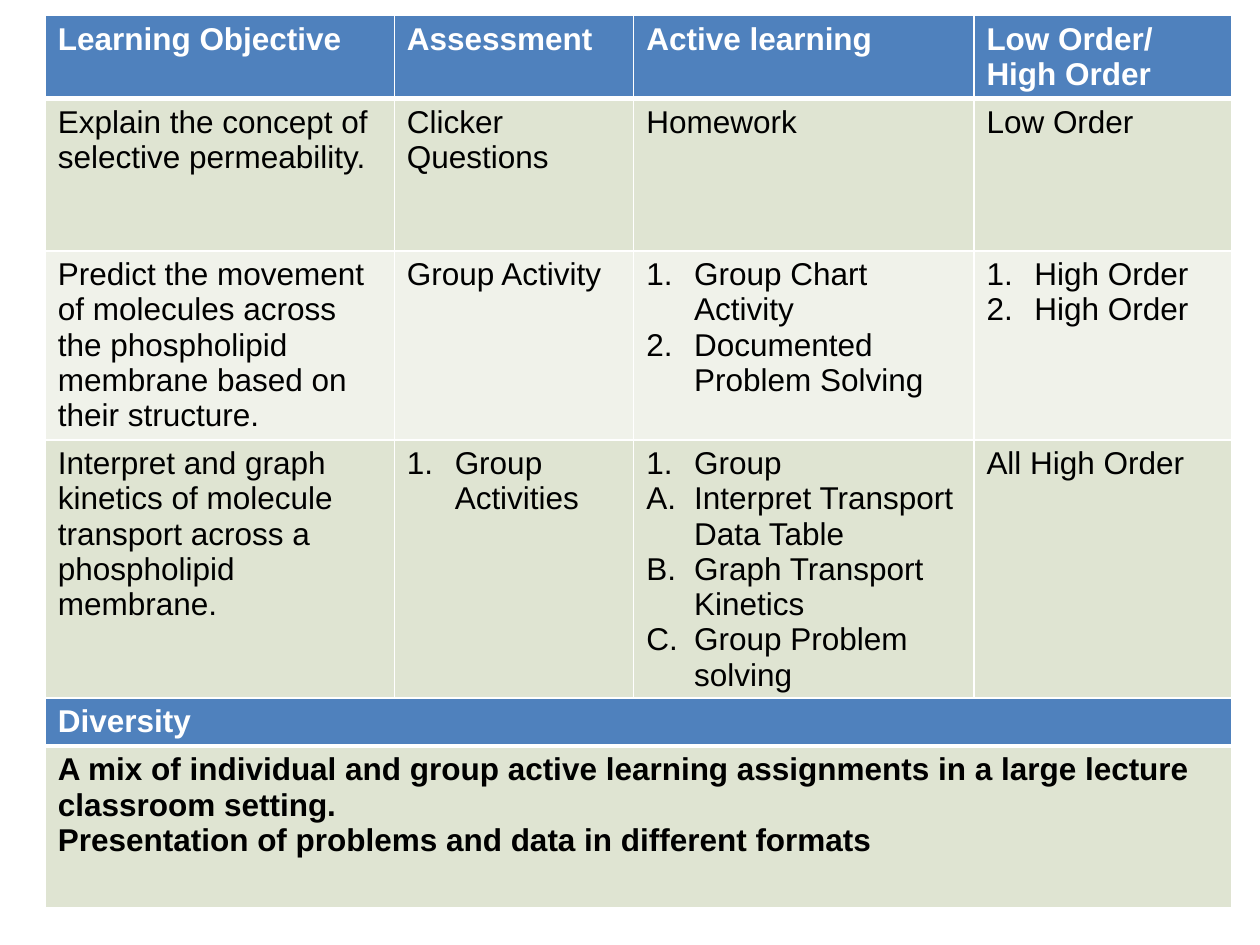
"""Build a slide of learning objectives with a diversity table below."""
from lxml.etree import SubElement
from pptx import Presentation
from pptx.dml.color import RGBColor as Color
from pptx.oxml.ns import qn
from pptx.util import Inches, Pt

BLUE = Color(0x4F, 0x81, 0xBD)
GREEN = Color(0xDF, 0xE4, 0xD2)
PALE = Color(0xF0, 0xF2, 0xEA)
WHITE = Color(0xFF, 0xFF, 0xFF)
BLACK = Color(0x00, 0x00, 0x00)
BANDS = [GREEN, PALE]
SCHEMES = {"1. ": "arabicPeriod", "A. ": "alphaUcPeriod"}
LEFT = 0.36
COLUMNS = [2.77, 1.9, 2.7, 2.05]
OBJECTIVE_HEIGHTS = [0.65, 1.21, 1.5, 2.06]
DIVERSITY_HEIGHTS = [0.38, 1.28]
OBJECTIVES = [
    ["Learning Objective", "Assessment", "Active learning", "Low Order/\nHigh Order"],
    ["Explain the concept of selective permeability.", "Clicker Questions",
     "Homework", "Low Order"],
    ["Predict the movement of molecules across the phospholipid membrane "
     "based on their structure.", "Group Activity",
     "1. Group Chart Activity\n1. Documented Problem Solving",
     "1. High Order\n1. High Order"],
    ["Interpret and graph kinetics of molecule transport across a "
     "phospholipid membrane.", "1. Group Activities",
     "1. Group\nA. Interpret Transport Data Table\n"
     "A. Graph Transport Kinetics\nA. Group Problem solving", "All High Order"],
]
DIVERSITY = [
    ["Diversity"],
    ["A mix of individual and group active learning assignments in a large "
     "lecture classroom setting.\n"
     "Presentation of problems and data in different formats"],
]


def number_paragraph(para, scheme):
    """Give a paragraph a hanging automatic number."""
    props = para._p.get_or_add_pPr()
    props.set("marL", str(Inches(0.38)))
    props.set("indent", str(-Inches(0.38)))
    SubElement(props, qn("a:buFont"), typeface="+mj-lt")
    SubElement(props, qn("a:buAutoNum"), type=scheme)


def write_cell(cell, text, color, bold):
    """Write the lines of a cell, numbering those that carry a marker."""
    lines = text.split("\n")
    cell.text_frame.text = "\n".join(
        line[3:] if line[:3] in SCHEMES else line for line in lines)
    for line, para in zip(lines, cell.text_frame.paragraphs):
        if line[:3] in SCHEMES:
            number_paragraph(para, SCHEMES[line[:3]])
        for span in para.runs:
            span.font.name = "Arial"
            span.font.size = Pt(18)
            span.font.bold = bold
            span.font.color.rgb = color


def border_cell(cell, top, bottom):
    """Draw white borders with the given top and bottom widths in points."""
    props = cell._tc.get_or_add_tcPr()
    for side, width in (("L", 1), ("R", 1), ("T", top), ("B", bottom)):
        line = SubElement(props, qn(f"a:ln{side}"), w=str(Pt(width)))
        fill = SubElement(line, qn("a:solidFill"))
        SubElement(fill, qn("a:srgbClr"), val=str(WHITE))


def add_grid(page, top, widths, heights, rows, bold_body=False):
    """Add a table with a blue header row and banded body rows."""
    table = page.shapes.add_table(
        len(rows), len(widths), Inches(LEFT), Inches(top),
        Inches(sum(widths)), Inches(sum(heights))).table
    for column, width in zip(table.columns, widths):
        column.width = Inches(width)
    for index, (texts, height) in enumerate(zip(rows, heights)):
        header = index == 0
        table.rows[index].height = Inches(height)
        for cell, text in zip(table.rows[index].cells, texts):
            border_cell(cell, 3 if index == 1 else 1, 3 if header else 1)
            cell.fill.solid()
            cell.fill.fore_color.rgb = BLUE if header else BANDS[(index - 1) % 2]
            write_cell(cell, text, WHITE if header else BLACK, header or bold_body)


def main():
    """Build and save the deck."""
    deck = Presentation()
    deck.slide_width, deck.slide_height = Inches(10), Inches(7.5)
    page = deck.slides.add_slide(deck.slide_layouts[6])
    top = 0.12
    add_grid(page, top, COLUMNS, OBJECTIVE_HEIGHTS, OBJECTIVES)
    add_grid(page, top + sum(OBJECTIVE_HEIGHTS), [sum(COLUMNS)],
             DIVERSITY_HEIGHTS, DIVERSITY, bold_body=True)
    deck.save("out.pptx")


if __name__ == "__main__":
    main()
